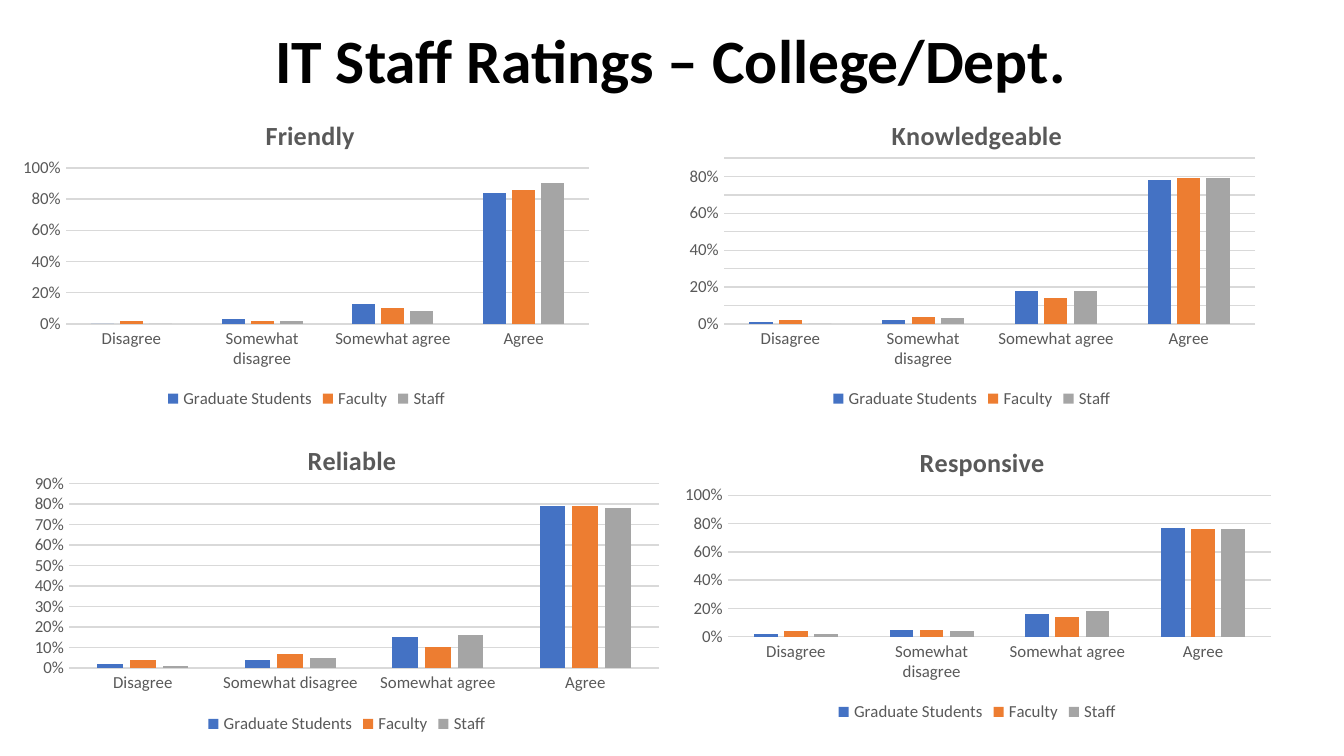
"""Build a slide with four clustered column charts of IT staff ratings."""
from pptx import Presentation
from pptx.chart.data import CategoryChartData
from pptx.dml.color import RGBColor
from pptx.enum.chart import XL_CHART_TYPE, XL_LEGEND_POSITION, XL_TICK_MARK
from pptx.enum.text import MSO_ANCHOR, PP_ALIGN
from pptx.oxml import parse_xml
from pptx.oxml.ns import nsdecls
from pptx.util import Pt

COLUMNS = XL_CHART_TYPE.COLUMN_CLUSTERED
BOTTOM = XL_LEGEND_POSITION.BOTTOM
NO_TICK = XL_TICK_MARK.NONE
MIDDLE = MSO_ANCHOR.MIDDLE
CENTER = PP_ALIGN.CENTER

FONT = "Calibri"
COLORS = {
    "title": "000000",
    "label": "595959",
    "grid": "D9D9D9",
    "Graduate Students": "4472C4",
    "Faculty": "ED7D31",
    "Staff": "A5A5A5",
}
HEADING = "IT Staff Ratings – College/Dept."
HEADING_BOX = (49, -5, 620.6, 78.5)
GROUPS = ("Graduate Students", "Faculty", "Staff")
ANSWERS = ("Disagree", "Somewhat disagree", "Somewhat agree", "Agree")
CHARTS = [
    {"title": "Friendly", "box": (6.5, 48.2, 315.4, 173.5),
     "title_at": (139.8, 60), "plot": (35.4, 90, 280.2, 83.6), "scale": (1, 0.2),
     "values": [(0, 0.03, 0.13, 0.84), (0.02, 0.02, 0.1, 0.86), (0, 0.02, 0.08, 0.9)]},
    {"title": "Knowledgeable", "box": (362.9, 48.2, 315.4, 173.5),
     "title_at": (475.2, 60), "plot": (387.9, 84.7, 284.5, 88.9), "scale": (0.9, 0.1),
     "values": [(0.01, 0.02, 0.18, 0.78), (0.02, 0.04, 0.14, 0.79), (0, 0.03, 0.18, 0.79)]},
    {"title": "Reliable", "box": (11.5, 222.5, 348.5, 173.5),
     "title_at": (162.3, 234.3), "plot": (37, 259, 316.1, 98.9), "scale": (0.9, 0.1),
     "values": [(0.02, 0.04, 0.15, 0.79), (0.04, 0.07, 0.1, 0.79), (0.01, 0.05, 0.16, 0.78)]},
    {"title": "Responsive", "box": (360, 223.9, 326.9, 165.6),
     "title_at": (490.2, 235.2), "plot": (390, 265.4, 290.9, 75.8), "scale": (1, 0.2),
     "values": [(0.02, 0.05, 0.16, 0.77), (0.04, 0.05, 0.14, 0.76), (0.02, 0.04, 0.18, 0.76)]},
]


def color(name):
    return RGBColor.from_string(COLORS[name])


def style_font(font, size, name="label", bold=False):
    font.name, font.size, font.bold = FONT, Pt(size), bold
    font.color.rgb = color(name)


def place_part(parent, index, box, area, inner=False):
    """Fix a chart part at an area given in slide points."""
    left, top, width, height = box
    shares = [(area[0] - left) / width, (area[1] - top) / height]
    shares += [size / whole for size, whole in zip(area[2:], (width, height))]
    tags = '<c:layoutTarget val="inner"/>' if inner else ""
    tags += '<c:xMode val="edge"/><c:yMode val="edge"/>'
    tags += "".join(f'<c:{tag} val="{share:.4f}"/>' for tag, share in zip("xywh", shares))
    for layout in parent.xpath("c:layout"):
        parent.remove(layout)
    parent.insert(index, parse_xml(
        f'<c:layout {nsdecls("c")}><c:manualLayout>{tags}</c:manualLayout></c:layout>'))


def add_heading(page):
    box = page.shapes.add_textbox(*map(Pt, HEADING_BOX))
    frame = box.text_frame
    frame.word_wrap = True
    frame.vertical_anchor = MIDDLE
    frame.text = HEADING
    para = frame.paragraphs[0]
    para.alignment = CENTER
    para.line_spacing = 0.9
    style_font(para.runs[0].font, 33, "title", True)


def style_axes(chart, scale):
    for axis in (chart.category_axis, chart.value_axis):
        axis.major_tick_mark = axis.minor_tick_mark = NO_TICK
        style_font(axis.tick_labels.font, 9)
    values = chart.value_axis
    values.minimum_scale = 0
    values.maximum_scale, values.major_unit = scale
    values.tick_labels.number_format = "0%"
    values.tick_labels.number_format_is_linked = False
    values.format.line.fill.background()
    for line in (chart.category_axis.format.line, values.major_gridlines.format.line):
        line.color.rgb = color("grid")
        line.width = Pt(0.75)


def add_rating_chart(page, rating):
    data = CategoryChartData(number_format="0%")
    data.categories = ANSWERS
    for group, values in zip(GROUPS, rating["values"]):
        data.add_series(group, values)
    box = rating["box"]
    chart = page.shapes.add_chart(COLUMNS, *map(Pt, box), data).chart
    style_font(chart.font, 10, "title")

    title = chart.chart_title
    title.text_frame.text = rating["title"]
    style_font(title.text_frame.paragraphs[0].runs[0].font, 14, bold=True)
    place_part(title.element, 1, box, rating["title_at"])
    place_part(chart.element.xpath("c:chart/c:plotArea")[0], 0, box, rating["plot"], True)

    chart.has_legend = True
    chart.legend.position = BOTTOM
    chart.legend.include_in_layout = False
    style_font(chart.legend.font, 9)
    style_axes(chart, rating["scale"])

    plot = chart.plots[0]
    plot.gap_width, plot.overlap = 219, -27
    plot.vary_by_categories = False
    for series in plot.series:
        series.format.fill.solid()
        series.format.fill.fore_color.rgb = color(series.name)


def main():
    deck = Presentation()
    deck.slide_width, deck.slide_height = Pt(720), Pt(405)
    page = deck.slides.add_slide(deck.slide_layouts[6])
    add_heading(page)
    for rating in CHARTS:
        add_rating_chart(page, rating)
    deck.save("out.pptx")


if __name__ == "__main__":
    main()
